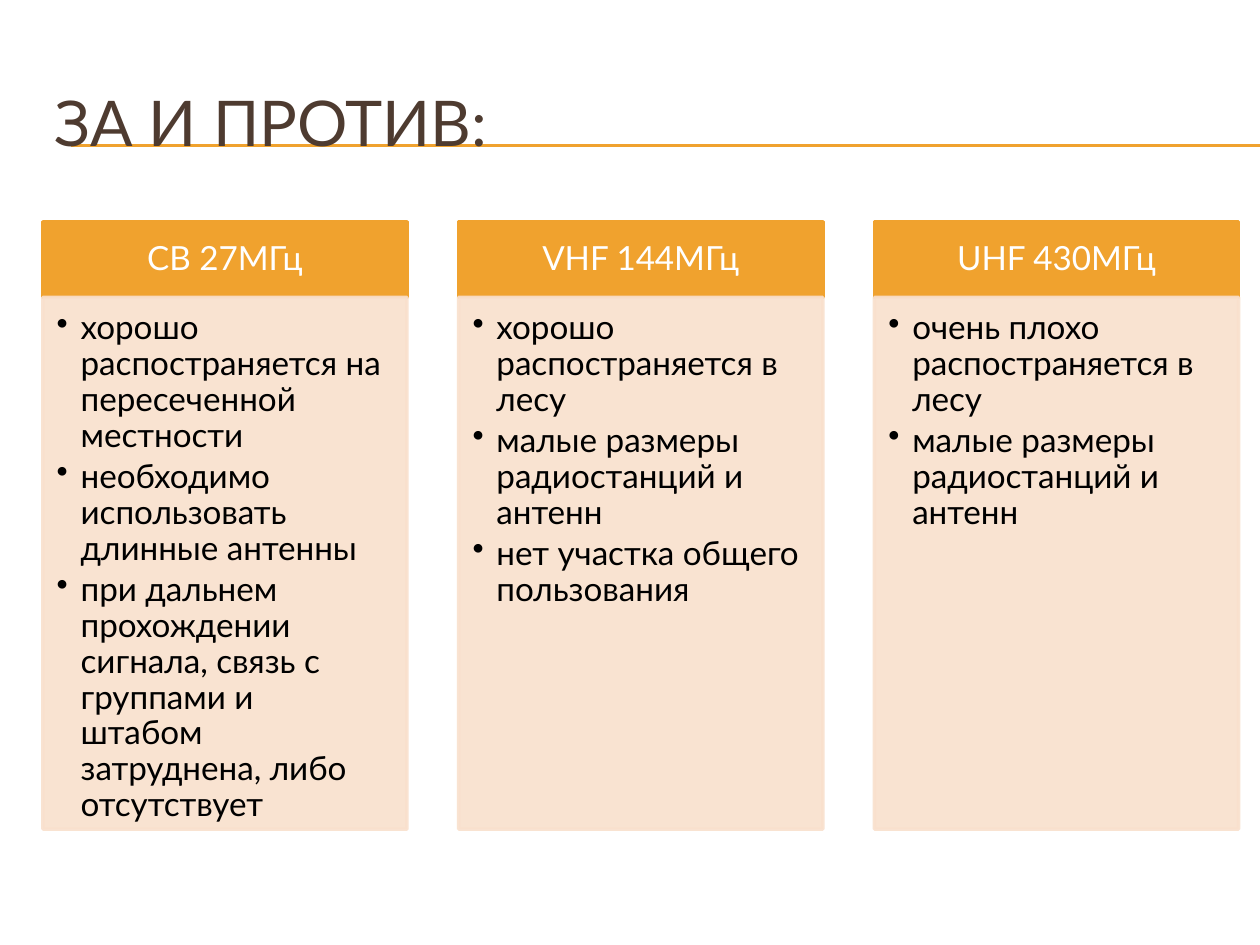
from dataclasses import dataclass

from lxml import etree
from pptx import Presentation
from pptx import util as u
from pptx.dml.color import RGBColor
from pptx.enum import shapes, text
from pptx.oxml.ns import qn


@dataclass(frozen=True)
class Theme:
    font: str = "Lato"
    accent: RGBColor = RGBColor(0xF0, 0xA2, 0x2E)
    panel: RGBColor = RGBColor(0xF9, 0xE0, 0xCD)
    title: RGBColor = RGBColor(0x4E, 0x3B, 0x30)
    header_text: RGBColor = RGBColor(0xFF, 0xFF, 0xFF)
    body_text: RGBColor = RGBColor(0, 0, 0)
    title_size: float = 36
    text_size: float = 19
    panel_alpha: int = 90


@dataclass(frozen=True)
class Grid:
    left: float = 0.34
    pitch: float = 3.3
    width: float = 2.89
    top: float = 1.76
    header_height: float = 0.6
    body_height: float = 4.22


@dataclass(frozen=True)
class Band:
    name: str
    points: tuple[str, ...]


THEME = Theme()
GRID = Grid()
BANDS = (
    Band("СВ 27МГц", (
        "хорошо распостраняется на пересеченной местности",
        "необходимо использовать длинные антенны",
        "при дальнем прохождении сигнала, связь с группами и  штабом затруднена, либо отсутствует",
    )),
    Band("VHF 144МГц", (
        "хорошо распостраняется в лесу",
        "малые размеры радиостанций и антенн",
        "нет участка общего пользования",
    )),
    Band("UHF 430МГц", (
        "очень плохо распостраняется в лесу",
        "малые размеры радиостанций и антенн",
    )),
)


def format_runs(paragraph, size: float, color: RGBColor) -> None:
    for run in paragraph.runs:
        run.font.name = THEME.font
        run.font.size = u.Pt(size)
        run.font.color.rgb = color


def set_insets(frame, left: float, top: float, right: float, bottom: float) -> None:
    frame.margin_left, frame.margin_top = u.Inches(left), u.Inches(top)
    frame.margin_right, frame.margin_bottom = u.Inches(right), u.Inches(bottom)


def add_bullet(paragraph) -> None:
    properties = paragraph._p.get_or_add_pPr()
    properties.set("marL", str(u.Inches(0.19)))
    properties.set("indent", str(-u.Inches(0.19)))
    etree.SubElement(properties, qn("a:buChar"), char="•")


def set_alpha(shape, percent: int) -> None:
    """Make the fill and the outline of a shape equally translucent."""
    for color in shape._element.spPr.iter(qn("a:srgbClr")):
        etree.SubElement(color, qn("a:alpha"), val=str(percent * 1000))


def add_box(slide, column: int, top: float, height: float, color: RGBColor):
    shape = slide.shapes.add_shape(
        shapes.MSO_SHAPE.RECTANGLE,
        u.Inches(GRID.left + column * GRID.pitch), u.Inches(top),
        u.Inches(GRID.width), u.Inches(height))
    shape.shadow.inherit = False
    shape.fill.solid()
    shape.fill.fore_color.rgb = color
    shape.line.color.rgb = color
    shape.line.width = u.Pt(2)
    shape.text_frame.word_wrap = True
    return shape


def add_band(slide, column: int, band: Band) -> None:
    header = add_box(slide, column, GRID.top, GRID.header_height, THEME.accent)
    frame = header.text_frame
    set_insets(frame, 0.15, 0.08, 0.15, 0.08)
    frame.vertical_anchor = text.MSO_ANCHOR.MIDDLE
    frame.text = band.name
    frame.paragraphs[0].alignment = text.PP_ALIGN.CENTER
    frame.paragraphs[0].line_spacing = 0.9
    format_runs(frame.paragraphs[0], THEME.text_size, THEME.header_text)

    body = add_box(slide, column, GRID.top + GRID.header_height, GRID.body_height, THEME.panel)
    set_alpha(body, THEME.panel_alpha)
    frame = body.text_frame
    set_insets(frame, 0.11, 0.11, 0.15, 0.17)
    frame.vertical_anchor = text.MSO_ANCHOR.TOP
    frame.text = "\n".join(band.points)
    for paragraph in frame.paragraphs:
        paragraph.alignment = text.PP_ALIGN.LEFT
        paragraph.level = 1
        paragraph.line_spacing = 0.9
        paragraph.space_after = u.Pt(0.15 * THEME.text_size)
        add_bullet(paragraph)
        format_runs(paragraph, THEME.text_size, THEME.body_text)


def add_rule(slide, y: float) -> None:
    """Draw a title rule behind everything else."""
    rule = slide.shapes.add_connector(
        shapes.MSO_CONNECTOR.STRAIGHT,
        u.Inches(0.56), u.Inches(y), u.Inches(10), u.Inches(y))
    rule.line.color.rgb = THEME.accent
    rule.line.width = u.Pt(0.75)
    etree.SubElement(rule._element.spPr, qn("a:effectLst"))
    slide.shapes._spTree.insert(2, rule._element)


def format_title(slide, wording: str) -> None:
    title = slide.shapes.title
    title.left, title.top = u.Inches(0.33), u.Inches(0.5)
    title.width, title.height = u.Inches(9.5), u.Inches(0.92)
    frame = title.text_frame
    frame.text = wording
    frame.word_wrap = True
    frame.auto_size = text.MSO_AUTO_SIZE.NONE
    frame.vertical_anchor = text.MSO_ANCHOR.MIDDLE
    frame.paragraphs[0].alignment = text.PP_ALIGN.LEFT
    format_runs(frame.paragraphs[0], THEME.title_size, THEME.title)


def main() -> None:
    presentation = Presentation()
    presentation.slide_width, presentation.slide_height = u.Inches(10), u.Inches(7.5)
    slide = presentation.slides.add_slide(presentation.slide_layouts[5])
    format_title(slide, "ЗА И ПРОТИВ:")
    for y in (1.16, 1.15):
        add_rule(slide, y)
    for column, band in enumerate(BANDS):
        add_band(slide, column, band)
    presentation.save("out.pptx")


if __name__ == "__main__":
    main()
